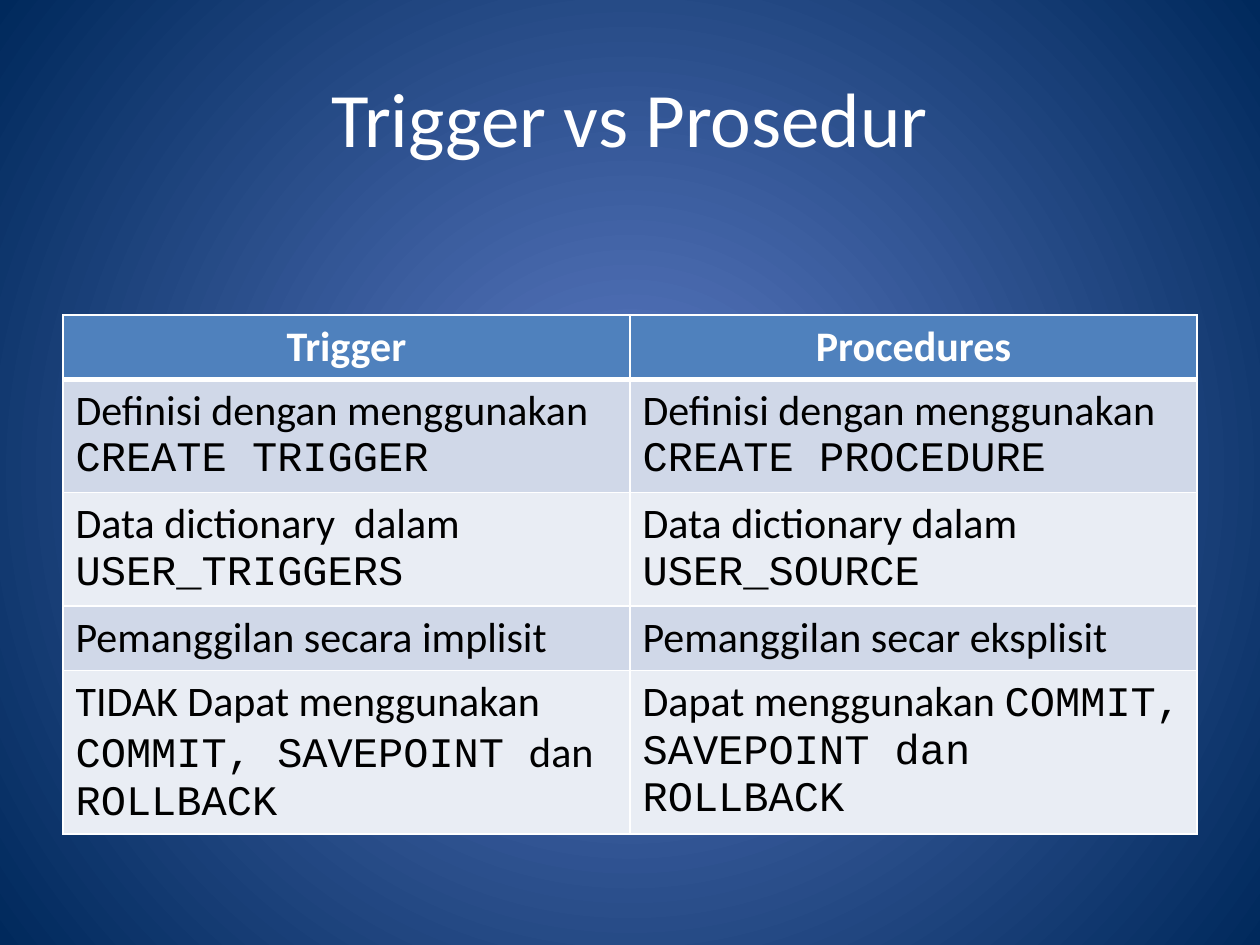
from dataclasses import dataclass

from pptx import Presentation
from pptx.dml.color import RGBColor
from pptx.enum.text import MSO_ANCHOR, PP_ALIGN
from pptx.oxml import parse_xml
from pptx.oxml.ns import nsdecls
from pptx.util import Inches, Pt


@dataclass(frozen=True)
class Theme:
    body: str = "Calibri"
    code: str = "Courier New"
    title_size: int = 44
    cell_size: int = 24
    white: str = "FFFFFF"
    black: str = "000000"
    header: str = "4F81BD"
    bands: tuple = ("D0D8E8", "E9EDF4")
    glow: str = "5E7CC5"
    edge: str = "00295C"


THEME = Theme()
BODY, CODE = THEME.body, THEME.code
HEADERS = ("Trigger", "Procedures")
ROWS = (
    (
        (("Definisi dengan menggunakan ", BODY), ("CREATE TRIGGER", CODE)),
        (("Definisi dengan menggunakan ", BODY), ("CREATE PROCEDURE", CODE)),
    ),
    (
        (("Data dictionary  dalam ", BODY), ("USER_TRIGGERS", CODE)),
        (("Data dictionary dalam ", BODY), ("USER_SOURCE", CODE)),
    ),
    (
        (("Pemanggilan secara implisit", BODY),),
        (("Pemanggilan secar eksplisit", BODY),),
    ),
    (
        (
            ("TIDAK Dapat menggunakan ", BODY),
            ("COMMIT, SAVEPOINT ", CODE),
            ("dan ", BODY),
            ("ROLLBACK", CODE),
        ),
        (("Dapat menggunakan ", BODY), ("COMMIT, SAVEPOINT dan ROLLBACK", CODE)),
    ),
)
ROW_HEIGHTS = (0.51, 0.88, 0.88, 0.51, 1.3)


def rgb(value):
    return RGBColor.from_string(value)


def set_background(s):
    fill = s.background.fill
    fill.gradient()
    for stop, color in zip(fill.gradient_stops, (THEME.glow, THEME.edge)):
        stop.color.rgb = rgb(color)
    lin = s.element.xpath("./p:cSld/p:bg//a:lin")[0]
    radial = parse_xml(
        f'<a:path {nsdecls("a")} path="circle">'
        '<a:fillToRect l="50000" t="50000" r="50000" b="50000"/></a:path>'
    )
    lin.getparent().replace(lin, radial)


def style_font(font, size, color, bold=False):
    font.size = Pt(size)
    font.color.rgb = rgb(color)
    font.bold = bold


def add_title(s, text):
    sp = s.shapes.add_textbox(Inches(0.5), Inches(0.3), Inches(9), Inches(1.25))
    tf = sp.text_frame
    tf.word_wrap = True
    tf.vertical_anchor = MSO_ANCHOR.MIDDLE
    p = tf.paragraphs[0]
    p.text = text
    p.alignment = PP_ALIGN.CENTER
    p.font.name = BODY
    style_font(p.font, THEME.title_size, THEME.white)


def set_borders(cell, bottom, top):
    tc_pr = cell._tc.get_or_add_tcPr()
    widths = (("L", 1), ("R", 1), ("T", top), ("B", bottom))
    for i, (side, width) in enumerate(widths):
        line = parse_xml(
            f'<a:ln{side} {nsdecls("a")} w="{Pt(width)}"><a:solidFill>'
            f'<a:srgbClr val="{THEME.white}"/></a:solidFill></a:ln{side}>'
        )
        tc_pr.insert(i, line)


def fill_cell(cell, runs, fill, color, bold=False, align=PP_ALIGN.LEFT):
    cell.fill.solid()
    cell.fill.fore_color.rgb = rgb(fill)
    p = cell.text_frame.paragraphs[0]
    p.alignment = align
    style_font(p.font, THEME.cell_size, color, bold)
    for text, font_name in runs:
        r = p.add_run()
        r.text = text
        r.font.name = font_name
        style_font(r.font, THEME.cell_size, color, bold)


def add_comparison(s):
    frame = s.shapes.add_table(
        len(ROWS) + 1, len(HEADERS),
        Inches(0.5), Inches(2.5), Inches(9), Inches(sum(ROW_HEIGHTS)),
    )
    table = frame.table
    for row, height in zip(table.rows, ROW_HEIGHTS):
        row.height = Inches(height)
    for col, text in enumerate(HEADERS):
        cell = table.cell(0, col)
        fill_cell(cell, ((text, BODY),), THEME.header, THEME.white, True, PP_ALIGN.CENTER)
        set_borders(cell, bottom=3, top=1)
    for row, contents in enumerate(ROWS, 1):
        band = THEME.bands[(row - 1) % 2]
        for col, runs in enumerate(contents):
            cell = table.cell(row, col)
            fill_cell(cell, runs, band, THEME.black)
            set_borders(cell, bottom=1, top=3 if row == 1 else 1)


def main():
    prs = Presentation()
    prs.slide_width, prs.slide_height = Inches(10), Inches(7.5)
    s = prs.slides.add_slide(prs.slide_layouts[6])
    set_background(s)
    add_title(s, "Trigger vs Prosedur")
    add_comparison(s)
    prs.save("out.pptx")


if __name__ == "__main__":
    main()
